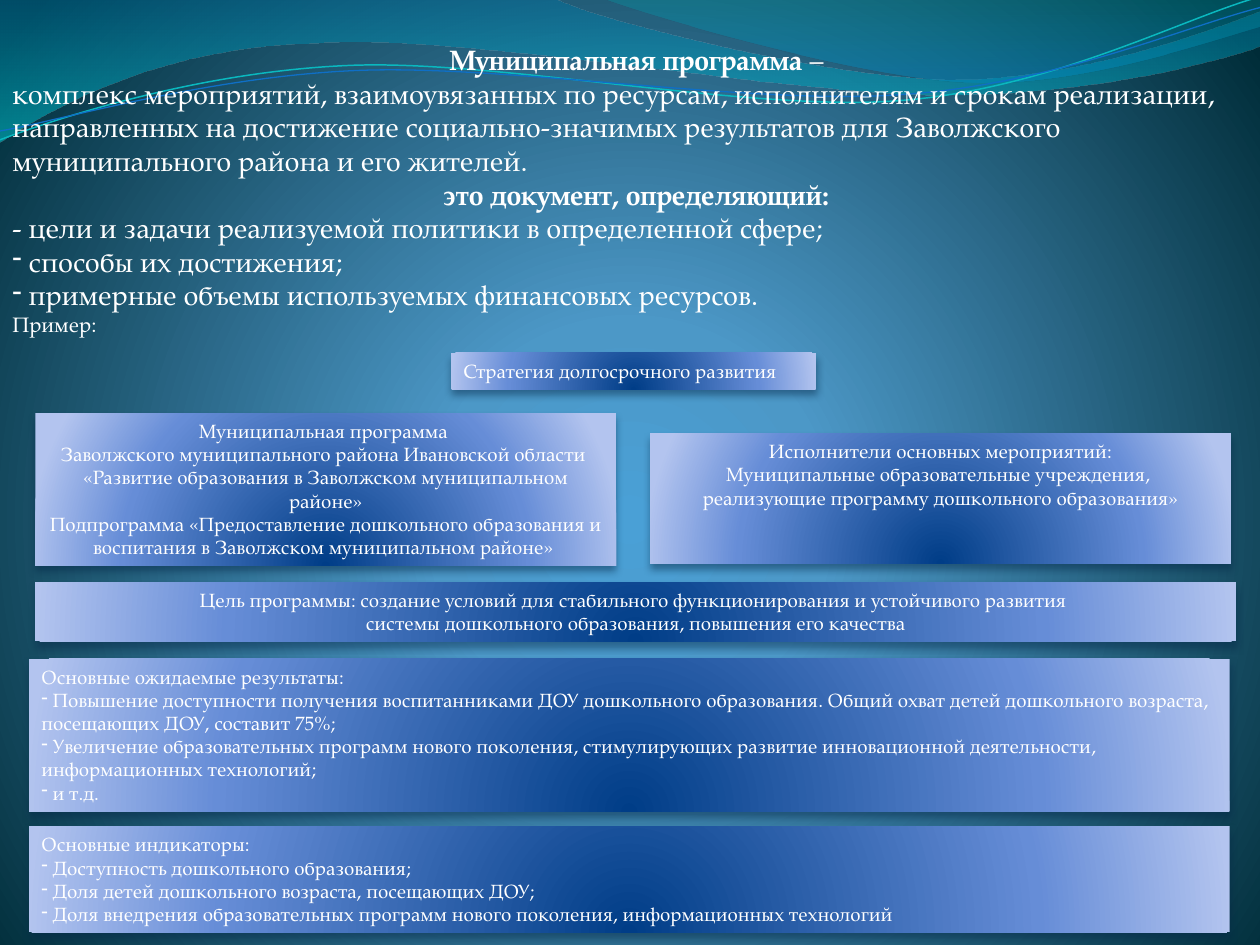
from dataclasses import dataclass

from lxml import etree
from pptx import Presentation
from pptx import util as u
from pptx.dml.color import RGBColor
from pptx.enum import shapes, text
from pptx.oxml import ns, parse_xml

SCALE = 9144
FONT = "TeX Gyre Pagella"
COLORS = {
    "white": "FFFFFF", "glow": "4AA0D6", "sky": "4C98C7", "night": "002C38",
    "sea": "0074A1", "aqua": "00C6CF", "teal": "00A1A9", "azure": "008BBF",
    "cyan_line": "0AB8BF", "blue_line": "0F6FC6",
    "navy": "003D87", "cornflower": "668DD7", "lavender": "B3C4EF", "shadow": "042747",
}


@dataclass(frozen=True)
class Stop:
    position: int
    color: str
    alpha: int = 100


@dataclass(frozen=True)
class Line:
    text: str
    centered: bool = False
    bullet: bool = False
    bold: bool = False
    tail: str = ""
    size: int = 11


@dataclass(frozen=True)
class Panel:
    left: int
    top: int
    width: int
    height: int
    lines: tuple[Line, ...]


@dataclass(frozen=True)
class Wave:
    start: tuple[int, int]
    segments: tuple[tuple[tuple[int, int], ...], ...]
    stops: tuple[Stop, ...] = ()
    line_color: str = ""
    line_width: float = 0


BACKGROUND = (Stop(0, "glow"), Stop(25, "sky"), Stop(100, "night"))
PANEL_FILL = (Stop(0, "navy"), Stop(68, "cornflower"), Stop(100, "lavender"))

WAVES = (
    Wave((0, 0), (
        ((440, -1),),
        ((476, 17), (664, 63), (758, 63)),
        ((853, 63), (958, 26), (1000, 9)),
        ((1001, 36),),
        ((983, 44), (870, 76), (746, 75)),
        ((622, 75), (382, 28), (257, 34)),
        ((129, 36), (46, 83), (-1, 113)),
    ), (Stop(0, "sea", 45), Stop(100, "aqua", 55))),
    Wave((479, -1), (
        ((509, 11), (682, 62), (769, 65)),
        ((856, 69), (961, 32), (1000, 21)),
        ((1000, 0),),
    ), (Stop(0, "teal", 30), Stop(80, "azure", 45))),
    Wave((0, 111), (
        ((48, 93), (158, 57), (277, 52)),
        ((395, 47), (593, 89), (713, 80)),
        ((833, 71), (938, 15), (998, -2)),
    ), line_color="cyan_line", line_width=0.85),
    Wave((0, 104), (
        ((47, 96), (164, 61), (283, 56)),
        ((403, 51), (597, 84), (717, 75)),
        ((836, 67), (941, 21), (1000, 6)),
    ), line_color="blue_line", line_width=0.75),
)

DEFINITION = Panel(0, 29, 1016, 246, (
    Line("Муниципальная программа", centered=True, bold=True, tail=" – ", size=16),
    Line("комплекс мероприятий, взаимоувязанных по ресурсам, исполнителям и срокам реализации, "
         "направленных на достижение социально-значимых результатов для Заволжского "
         "муниципального района и его жителей.", size=16),
    Line("это документ, определяющий: ", centered=True, bold=True, size=16),
    Line("- цели и задачи реализуемой политики в определенной сфере;", size=16),
    Line(" способы их достижения;", bullet=True, size=16),
    Line(" примерные объемы используемых финансовых ресурсов.", bullet=True, size=16),
    Line("Пример:", size=12),
))

PANELS = (
    Panel(358, 280, 290, 29, (Line("Стратегия долгосрочного развития"),)),
    Panel(28, 328, 461, 121, (
        Line("Муниципальная программа ", centered=True),
        Line("Заволжского муниципального района Ивановской области ", centered=True),
        Line("«Развитие образования в Заволжском муниципальном районе»", centered=True),
        Line("Подпрограмма «Предоставление дошкольного образования и воспитания "
             "в Заволжском муниципальном районе» ", centered=True),
    )),
    Panel(516, 344, 461, 103, (
        Line("Исполнители основных мероприятий:", centered=True),
        Line("Муниципальные образовательные учреждения, ", centered=True),
        Line("реализующие программу дошкольного образования»", centered=True),
    )),
    Panel(28, 462, 953, 47, (
        Line("Цель программы: создание условий для стабильного функционирования "
             "и устойчивого развития ", centered=True),
        Line("системы дошкольного образования, повышения его качества", centered=True),
    )),
    Panel(23, 523, 953, 121, (
        Line("Основные ожидаемые результаты:"),
        Line(" Повышение доступности получения воспитанниками ДОУ дошкольного образования. "
             "Общий охват детей дошкольного возраста, посещающих ДОУ, составит 75%;", bullet=True),
        Line(" Увеличение образовательных программ нового поколения, стимулирующих развитие "
             "инновационной деятельности, информационных технологий;", bullet=True),
        Line(" и т.д.", bullet=True),
    )),
    Panel(23, 656, 953, 84, (
        Line("Основные индикаторы:"),
        Line(" Доступность дошкольного образования;", bullet=True),
        Line(" Доля детей дошкольного возраста, посещающих ДОУ;", bullet=True),
        Line(" Доля внедрения образовательных программ нового поколения, "
             "информационных технологий", bullet=True),
    )),
)


def px(value: int) -> int:
    return value * SCALE


def rgb(name: str) -> RGBColor:
    return RGBColor.from_string(COLORS[name])


def color_xml(name: str, alpha: int) -> str:
    opacity = f'<a:alpha val="{alpha * 1000}"/>' if alpha < 100 else ""
    return f'<a:srgbClr val="{COLORS[name]}">{opacity}</a:srgbClr>'


def set_gradient(owner, stops: tuple[Stop, ...], focus: tuple[int, ...] = ()) -> None:
    owner.fill.solid() if hasattr(owner, "fill") else owner.background.fill.solid()
    solid = owner.element.find(".//" + ns.qn("a:solidFill"))
    stop_xml = "".join(
        f'<a:gs pos="{stop.position * 1000}">{color_xml(stop.color, stop.alpha)}</a:gs>'
        for stop in stops)
    direction = '<a:lin ang="5400000" scaled="0"/>'
    if focus:
        edges = " ".join(f'{side}="{value * 1000}"' for side, value in zip("ltrb", focus))
        direction = f'<a:path path="circle"><a:fillToRect {edges}/></a:path>'
    gradient = parse_xml(f'<a:gradFill {ns.nsdecls("a")} rotWithShape="1">'
                         f'<a:gsLst>{stop_xml}</a:gsLst>{direction}</a:gradFill>')
    solid.getparent().replace(solid, gradient)


def add_shadow(shape) -> None:
    shape.shadow.inherit = False
    effects = shape.element.spPr.find(ns.qn("a:effectLst"))
    effects.append(parse_xml(
        f'<a:outerShdw {ns.nsdecls("a")} blurRad="{u.Pt(4.5)}" dist="{u.Pt(3)}" '
        f'dir="5400000" rotWithShape="0">{color_xml("shadow", 48)}</a:outerShdw>'))


def bend_segments(shape, wave: Wave) -> None:
    steps = iter(shape.element.findall(".//" + ns.qn("a:lnTo")))
    for controls in wave.segments:
        group = [next(steps) for _ in controls]
        if len(group) == 3:
            curve = etree.Element(ns.qn("a:cubicBezTo"))
            group[0].addprevious(curve)
            for step in group:
                curve.append(step[0])
                step.getparent().remove(step)


def draw_wave(slide, wave: Wave) -> None:
    points = [(px(x), px(y)) for controls in wave.segments for x, y in controls]
    builder = slide.shapes.build_freeform(px(wave.start[0]), px(wave.start[1]), 1.0)
    builder.add_line_segments(points, close=bool(wave.stops))
    shape = builder.convert_to_shape()
    bend_segments(shape, wave)
    shape.shadow.inherit = False
    if wave.stops:
        set_gradient(shape, wave.stops)
        shape.line.fill.background()
    else:
        shape.fill.background()
        shape.line.color.rgb = rgb(wave.line_color)
        shape.line.width = u.Pt(wave.line_width)


def set_base_style(frame, size: int) -> None:
    body = frame._txBody
    style = body.find(ns.qn("a:lstStyle"))
    if style is None:
        style = etree.Element(ns.qn("a:lstStyle"))
        body.find(ns.qn("a:bodyPr")).addnext(style)
    style.append(parse_xml(
        f'<a:lvl1pPr {ns.nsdecls("a")}><a:defRPr sz="{size * 100}">'
        f'<a:solidFill>{color_xml("white", 100)}</a:solidFill>'
        f'<a:latin typeface="{FONT}"/></a:defRPr></a:lvl1pPr>'))


def write_lines(shape, lines: tuple[Line, ...]) -> None:
    frame = shape.text_frame
    frame.word_wrap = True
    frame.auto_size = text.MSO_AUTO_SIZE.SHAPE_TO_FIT_TEXT
    frame.vertical_anchor = text.MSO_ANCHOR.TOP
    frame.text = "\n".join(line.text for line in lines)
    set_base_style(frame, lines[0].size)
    for paragraph, line in zip(frame.paragraphs, lines):
        paragraph.alignment = text.PP_ALIGN.CENTER if line.centered else text.PP_ALIGN.LEFT
        if line.bullet:
            properties = paragraph._p.get_or_add_pPr()
            etree.SubElement(properties, ns.qn("a:buFontTx"))
            etree.SubElement(properties, ns.qn("a:buChar")).set("char", "-")
        if line.tail:
            paragraph.add_run().text = line.tail
        for index, run in enumerate(paragraph.runs):
            run.font.name = FONT
            run.font.size = u.Pt(line.size)
            run.font.bold = line.bold and index == 0
            run.font.color.rgb = rgb("white")


def draw_panel(slide, panel: Panel, filled: bool = True) -> None:
    box = [px(value) for value in (panel.left, panel.top, panel.width, panel.height)]
    if filled:
        shape = slide.shapes.add_shape(shapes.MSO_SHAPE.RECTANGLE, *box)
        set_gradient(shape, PANEL_FILL, (50, 130, 50, -30))
        shape.line.fill.background()
        add_shadow(shape)
    else:
        shape = slide.shapes.add_textbox(*box)
    write_lines(shape, panel.lines)


def main() -> None:
    presentation = Presentation()
    presentation.slide_width, presentation.slide_height = px(1000), px(750)
    slide = presentation.slides.add_slide(presentation.slide_layouts.get_by_name("Blank"))
    set_gradient(slide, BACKGROUND, (10, 110, 10, 100))
    for wave in WAVES:
        draw_wave(slide, wave)
    draw_panel(slide, DEFINITION, filled=False)
    for panel in PANELS:
        draw_panel(slide, panel)
    presentation.save("out.pptx")


if __name__ == "__main__":
    main()
